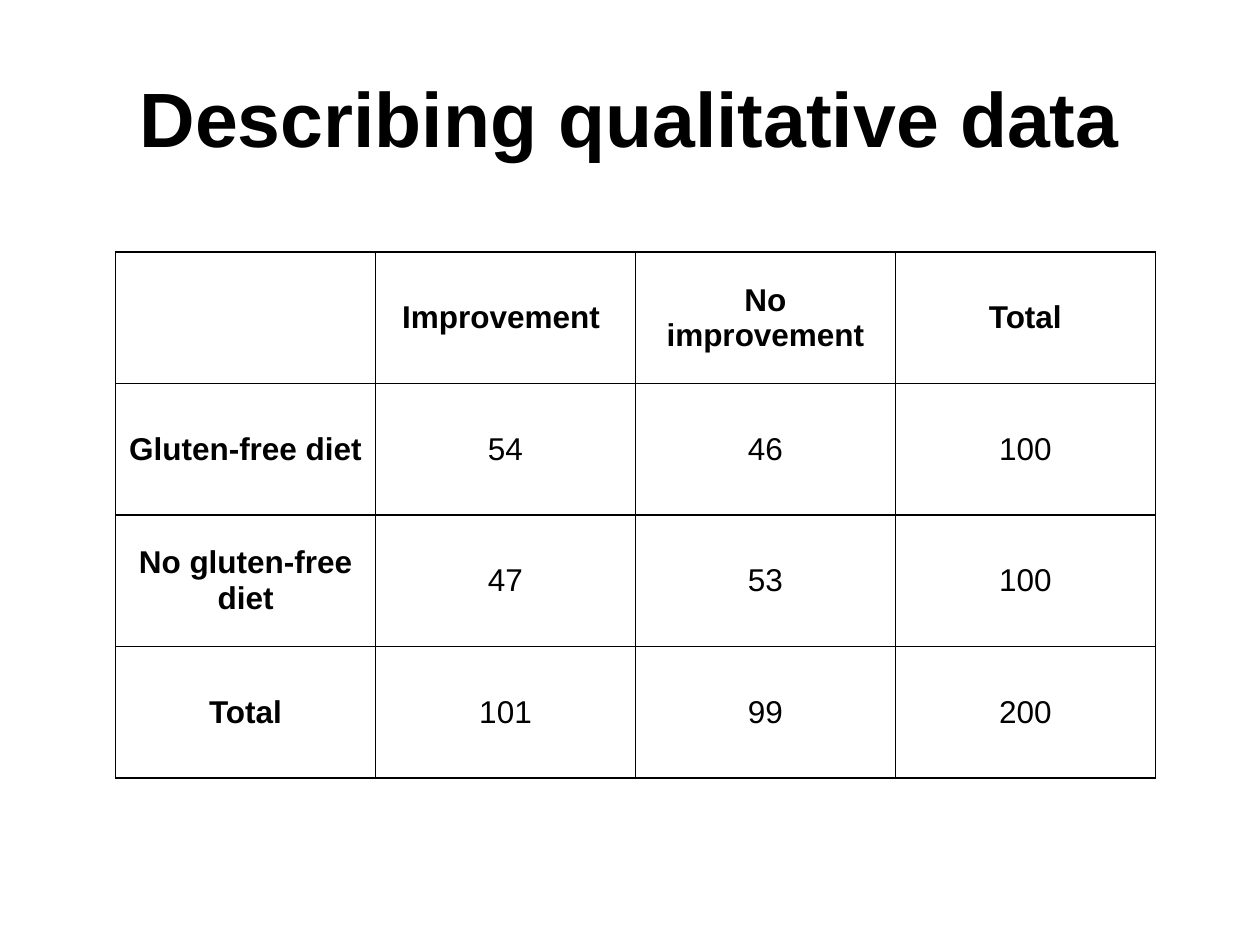
from lxml import etree
from pptx import Presentation
from pptx.dml.color import RGBColor
from pptx.enum.text import MSO_ANCHOR, PP_ALIGN
from pptx.oxml.ns import qn
from pptx.util import Cm, Pt

CENTER = PP_ALIGN.CENTER
MIDDLE = MSO_ANCHOR.MIDDLE
TITLE_ONLY = 5

ROWS = [
    ["", "Improvement ", "No improvement", "Total"],
    ["Gluten-free diet", "54", "46", "100"],
    ["No gluten-free diet", "47", "53", "100"],
    ["Total", "101", "99", "200"],
]


def color(code):
    return RGBColor.from_string(code)


class Deck:
    font = "Arial"
    ink = "000000"
    paper = "FFFFFF"

    def __init__(self, slide):
        self.slide = slide

    def label(self, frame, text, size, bold):
        frame.text = text
        for para in frame.paragraphs:
            para.alignment = CENTER
            for run in para.runs:
                run.font.name = self.font
                run.font.size = Pt(size)
                run.font.bold = bold
                run.font.color.rgb = color(self.ink)

    def title(self, text, left, top, width, height):
        shape = self.slide.shapes.title
        shape.left, shape.top = Cm(left), Cm(top)
        shape.width, shape.height = Cm(width), Cm(height)
        shape.text_frame.vertical_anchor = MIDDLE
        self.label(shape.text_frame, text, 44, True)

    def border(self, cell, width=1):
        props = cell._tc.get_or_add_tcPr()
        for place, side in enumerate("LRTB"):
            line = etree.Element(qn(f"a:ln{side}"), w=str(Pt(width)))
            fill = etree.SubElement(line, qn("a:solidFill"))
            etree.SubElement(fill, qn("a:srgbClr"), val=self.ink)
            props.insert(place, line)

    def table(self, rows, left, top, width, height):
        """Draw a ruled grid whose first row and column are bold."""
        table = self.slide.shapes.add_table(
            len(rows), len(rows[0]),
            Cm(left), Cm(top), Cm(width), Cm(height)).table
        for r, row in enumerate(rows):
            for c, text in enumerate(row):
                cell = table.cell(r, c)
                cell.fill.solid()
                cell.fill.fore_color.rgb = color(self.paper)
                cell.vertical_anchor = MIDDLE
                cell.margin_left = cell.margin_right = Cm(0.25)
                self.label(cell.text_frame, text, 18, r == 0 or c == 0)
                self.border(cell)


def main():
    show = Presentation()
    show.slide_width, show.slide_height = Cm(25.4), Cm(19.05)
    deck = Deck(show.slides.add_slide(show.slide_layouts[TITLE_ONLY]))
    deck.title("Describing qualitative data", 1.27, 0.76, 22.86, 3.18)
    deck.table(ROWS, 2.33, 5.08, 20.96, 10.6)
    show.save("out.pptx")


if __name__ == "__main__":
    main()
